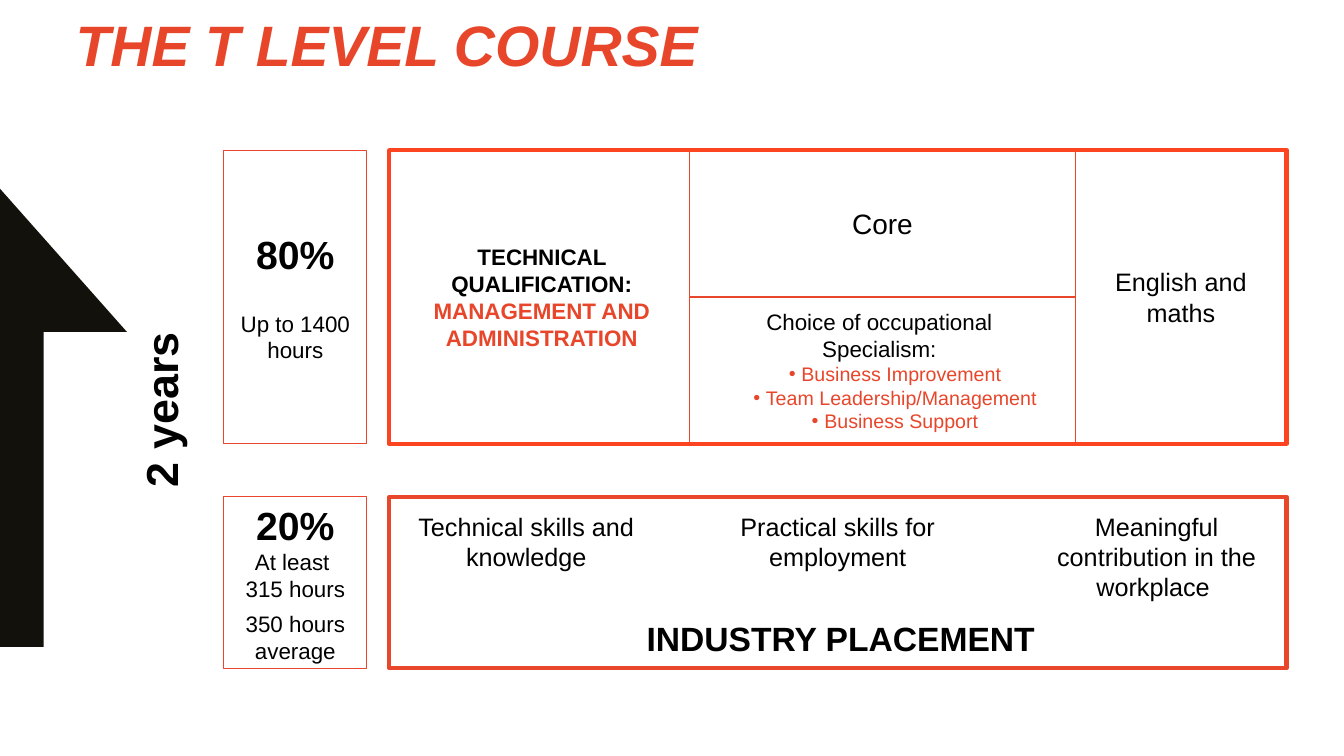
from lxml import etree
from pptx import Presentation
from pptx.dml.color import RGBColor
from pptx.enum.shapes import MSO_SHAPE
from pptx.enum.text import MSO_ANCHOR, MSO_AUTO_SIZE, PP_ALIGN
from pptx.oxml.ns import qn
from pptx.util import Pt

RECT = MSO_SHAPE.RECTANGLE
TOP, MIDDLE = MSO_ANCHOR.TOP, MSO_ANCHOR.MIDDLE
LEFT, CENTER = PP_ALIGN.LEFT, PP_ALIGN.CENTER
NO_FIT = MSO_AUTO_SIZE.NONE
TITLE_ONLY = 5
ORANGE, BORDER, BRIGHT = "E8462B", "E8472B", "FC4421"
BLACK, WHITE, ARROW = "000000", "FFFFFF", "12110C"


def rgb(value):
    """Turn a hex string into a colour."""
    return RGBColor.from_string(value)


def run(text, size=16, color=BLACK, bold=False, italic=False):
    """Describe one run of text."""
    return text, size, color, bold, italic


def para(*runs, after=0, bullet=False, align=CENTER, spacing=1.0):
    """Describe one paragraph made of runs."""
    return runs, after, bullet, align, spacing


class SlideBuilder:
    """Holds the style and the current slide."""

    font = "Arial"

    def __init__(self, prs):
        """Add a title-only slide."""
        self.s = prs.slides.add_slide(prs.slide_layouts[TITLE_ONLY])

    def set_text(self, sp, paras, anchor):
        """Fill a shape with formatted paragraphs."""
        tf = sp.text_frame
        tf.word_wrap = True
        tf.auto_size = NO_FIT
        tf.vertical_anchor = anchor
        for i, (runs, after, bullet, align, spacing) in enumerate(paras):
            p = tf.paragraphs[0] if i == 0 else tf.add_paragraph()
            p.alignment = align
            p.line_spacing = spacing
            p.space_before = Pt(0)
            p.space_after = Pt(after)
            if bullet:
                pPr = p._p.get_or_add_pPr()
                pPr.set("marL", str(Pt(27)))
                pPr.set("indent", str(Pt(-9)))
                font = etree.SubElement(pPr, qn("a:buFont"))
                font.set("typeface", self.font)
                etree.SubElement(pPr, qn("a:buChar")).set("char", "•")
            for text, size, color, bold, italic in runs:
                r = p.add_run()
                r.text = text
                r.font.name = self.font
                r.font.size = Pt(size)
                r.font.bold = bold
                r.font.italic = italic
                r.font.color.rgb = rgb(color)

    def title(self, box, text):
        """Place and format the title."""
        sp = self.s.shapes.title
        sp.left, sp.top, sp.width, sp.height = map(Pt, box)
        heading = run(text, 40.7, ORANGE, True, True)
        self.set_text(sp, [para(heading, align=LEFT, spacing=0.8)], MIDDLE)

    def text(self, box, *paras, anchor=TOP, rotation=0):
        """Add a text box."""
        sp = self.s.shapes.add_textbox(*map(Pt, box))
        sp.rotation = rotation
        self.set_text(sp, paras, anchor)

    def rect(self, box, *paras, line=BORDER, weight=0.75, fill=None):
        """Add a rectangle with an optional line, fill and text."""
        sp = self.s.shapes.add_shape(RECT, *map(Pt, box))
        sp.shadow.inherit = False
        if fill:
            sp.fill.solid()
            sp.fill.fore_color.rgb = rgb(fill)
        else:
            sp.fill.background()
        if line:
            sp.line.color.rgb = rgb(line)
            sp.line.width = Pt(weight)
        else:
            sp.line.fill.background()
        self.set_text(sp, paras, MIDDLE)

    def outline(self, points, fill):
        """Add a filled polygon."""
        start, *rest = [(Pt(x), Pt(y)) for x, y in points]
        fb = self.s.shapes.build_freeform(*start)
        fb.add_line_segments(rest, close=True)
        sp = fb.convert_to_shape()
        sp.shadow.inherit = False
        sp.fill.solid()
        sp.fill.fore_color.rgb = rgb(fill)
        sp.line.fill.background()


def main():
    """Build the course overview slide."""
    prs = Presentation()
    prs.slide_width, prs.slide_height = Pt(960), Pt(540)
    b = SlideBuilder(prs)
    top, height = 107.3, 209.7
    half = height / 2
    low, low_height = 355, 122.4
    share_x, share_w = 159.8, 102.3
    frame_x, frame_w = 278, 641
    core_x, core_w = 492.7, 275.3
    maths_x = core_x + core_w

    b.outline([(0, 134.8), (90.6, 237), (31.2, 237), (31.2, 462), (0, 462)], ARROW)
    b.title((46.8, 12.2, 781.2, 47.5), "THE T LEVEL COURSE")
    b.rect((share_x, top, share_w, height),
           para(run("80%", 28, bold=True), after=23),
           para(run("Up to 1400 hours")))
    b.rect((share_x, low, share_w, low_height),
           para(run("20%", 28, bold=True)),
           para(run("At least ")),
           para(run("315 hours"), after=6),
           para(run("350 hours average")))
    b.text((280.8, top, 212.4, height),
           para(run("TECHNICAL QUALIFICATION: ", bold=True),
                run("MANAGEMENT AND ADMINISTRATION", color=ORANGE, bold=True)),
           anchor=MIDDLE)
    b.rect((core_x, top, core_w, half), para(run("Core", 20)))
    specialisms = ["Business Improvement", "Team Leadership/Management",
                   "Business Support"]
    b.rect((core_x, top + half, core_w, half),
           para(run("Choice of occupational ")),
           para(run("Specialism: ")),
           *[para(run(name, 14, ORANGE), bullet=True) for name in specialisms])
    b.rect((maths_x, top, frame_x + frame_w - maths_x, height),
           para(run("English and maths", 18)))
    b.rect((280, 430.6, frame_w, 49.7),
           para(run("INDUSTRY PLACEMENT", 24, bold=True)), line=None, fill=WHITE)
    b.text((-70.6, 275.8, 370, 33.8), para(run("2 years", 32, bold=True)),
           anchor=MIDDLE, rotation=270)
    b.rect((frame_x, top, frame_w, height), line=BRIGHT, weight=3)
    b.rect((frame_x, low, frame_w, low_height), weight=3)
    for x, width, benefit in [
            (278, 195.8, "Technical skills and knowledge"),
            (499, 198.7, "Practical skills for employment"),
            (733.7, 185, "Meaningful contribution in the workplace ")]:
        b.text((x, 361.4, width, 84), para(run(benefit, 18)))
    prs.save("out.pptx")


if __name__ == "__main__":
    main()
